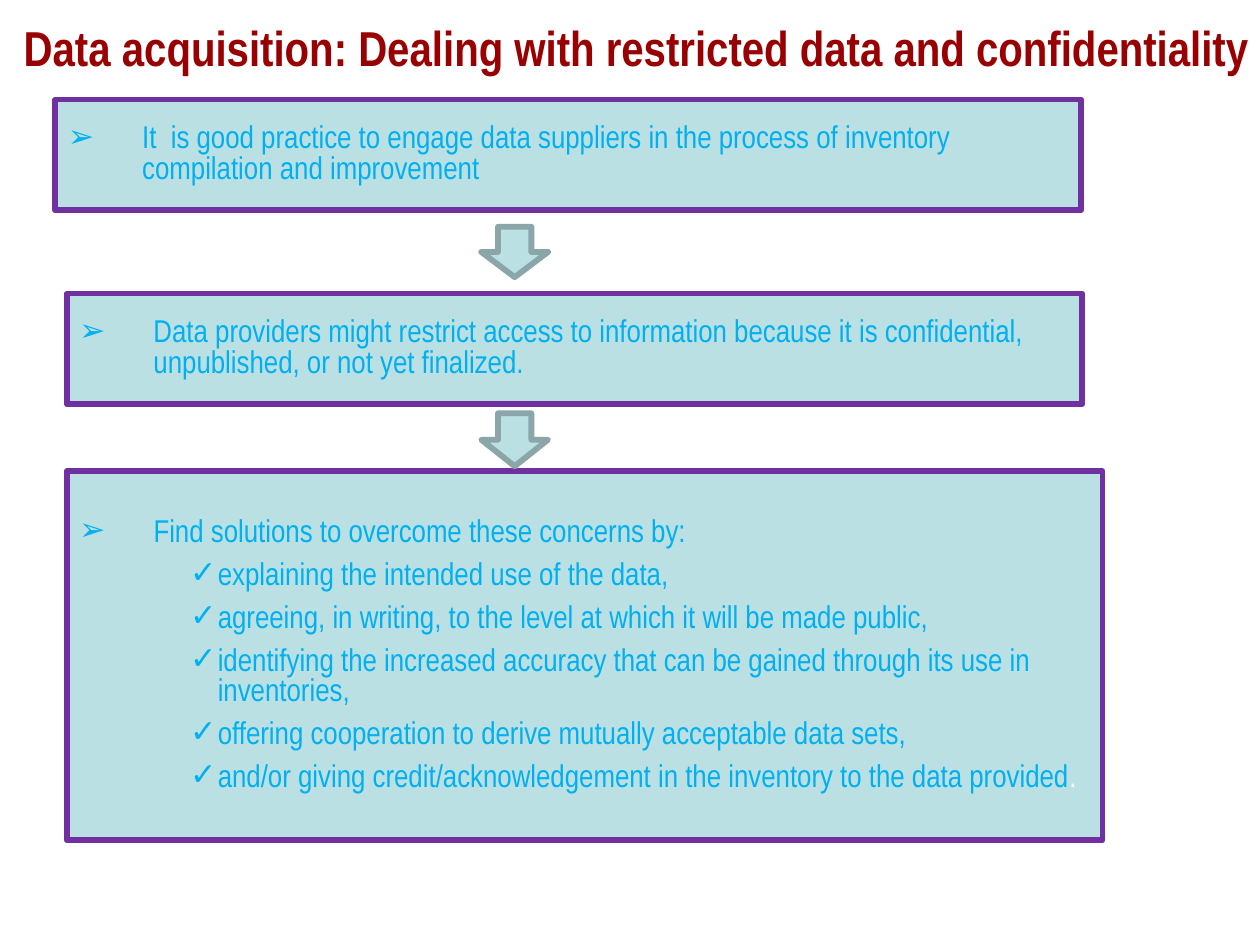
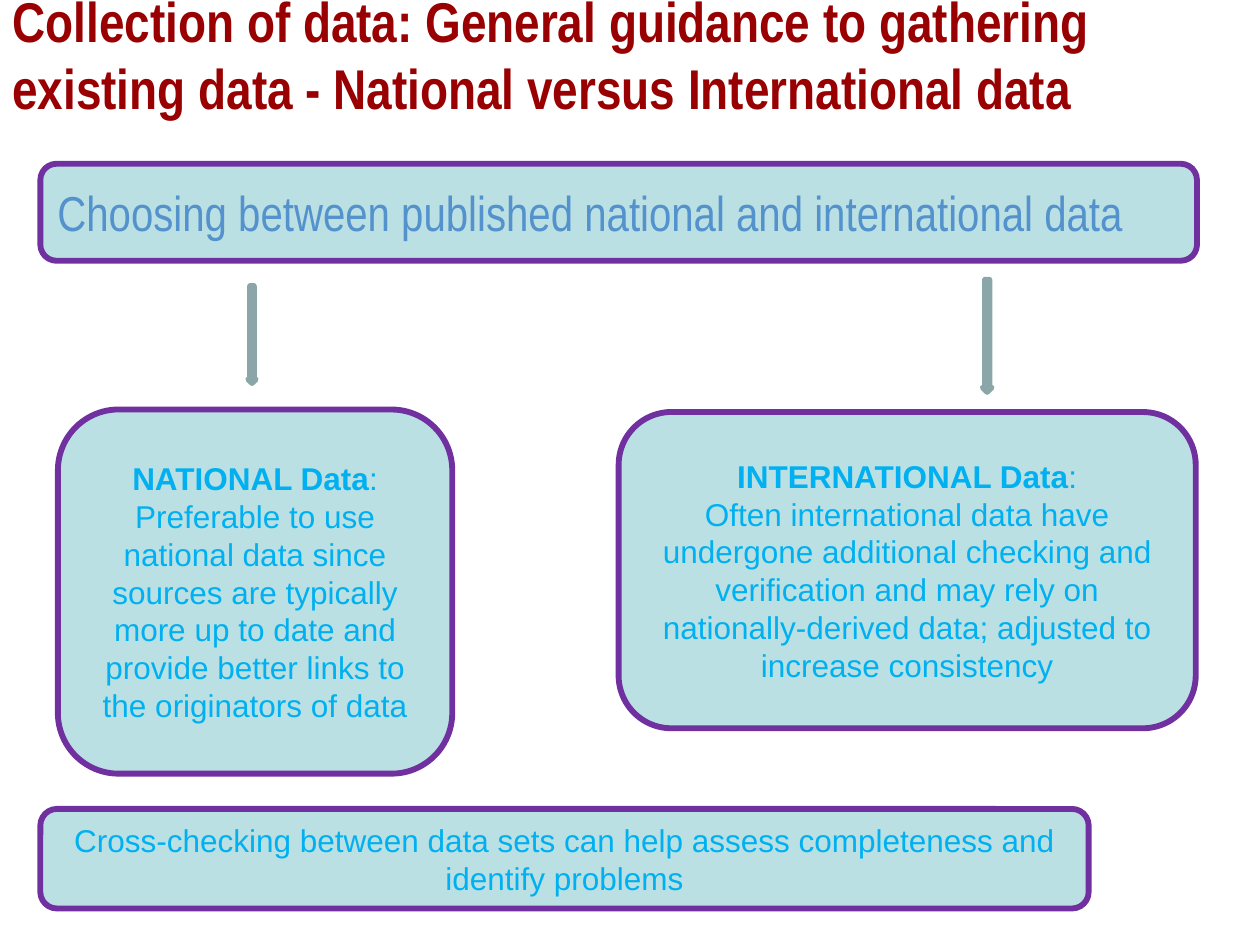
import pptx
import pptx.util
import pptx.dml.color
import pptx.enum.shapes
import pptx.enum.text
from lxml import etree
from pptx.oxml.ns import qn

Inches = pptx.util.Inches
Pt = pptx.util.Pt
MSO = pptx.enum.shapes.MSO_SHAPE
ALIGN = pptx.enum.text.PP_ALIGN
COLORS = {"title": "990002", "fill": "BBE0E3", "border": "7030A0",
          "arrow": "8AA6A8", "body": "00B0F0", "heading": "5492CD",
          "white": "FFFFFF"}
NARROW = "Arial Narrow"


def rgb(name):
    return pptx.dml.color.RGBColor.from_string(COLORS[name])


def add_text(s, box, paras, kind=None, line="border", size=18, font="Arial",
             color="body", bold=False, align=ALIGN.LEFT, spacing=None,
             before=0, bullets=()):
    at = [Inches(v) for v in box]
    if kind is None:
        sp = s.shapes.add_textbox(*at)
    else:
        sp = s.shapes.add_shape(kind, *at)
        sp.shadow.inherit = False
        sp.fill.solid()
        sp.fill.fore_color.rgb = rgb("fill")
        sp.line.color.rgb = rgb(line)
        sp.line.width = Pt(3.35)
    tf = sp.text_frame
    tf.word_wrap = True
    tf.vertical_anchor = pptx.enum.text.MSO_ANCHOR.MIDDLE
    for i, runs in enumerate(paras):
        p = tf.paragraphs[0] if i == 0 else tf.add_paragraph()
        p.alignment = align
        if spacing:
            p.line_spacing = spacing
        if i and before:
            p.space_before = Pt(before)
        if bullets:
            char, margin, hang = bullets[min(i, len(bullets) - 1)]
            pPr = p._p.get_or_add_pPr()
            pPr.set("marL", str(Inches(margin)))
            pPr.set("indent", str(-Inches(hang)))
            etree.SubElement(pPr, qn("a:buFont")).set("typeface", "Arial")
            etree.SubElement(pPr, qn("a:buChar")).set("char", char)
        if isinstance(runs, str):
            runs = [(runs, {})]
        for text, change in runs:
            r = p.add_run()
            r.text = text
            r.font.size = Pt(size)
            r.font.name = font
            r.font.bold = change.get("bold", bold)
            r.font.color.rgb = rgb(change.get("color", color))


prs = pptx.Presentation()
prs.slide_width = Inches(10)
prs.slide_height = Inches(7.5)
blank = prs.slide_layouts[6]
title = dict(font=NARROW, color="title", bold=True)
step = dict(kind=MSO.RECTANGLE, font=NARROW, spacing=0.8, before=7.2,
            bullets=[("➢", 0.59, 0.59), ("✓", 1.1, 0.22)])
centred = dict(kind=MSO.ROUNDED_RECTANGLE, align=ALIGN.CENTER)
arrow = dict(kind=MSO.DOWN_ARROW, line="arrow")

s = prs.slides.add_slide(blank)
add_text(s, (0.09, 0, 10, 0.75),
         ["Data acquisition: Dealing with restricted data and confidentiality"],
         size=28, **title)
steps = [
    ((0.44, 0.79, 8.14, 0.88),
     ["It  is good practice to engage data suppliers in the process of "
      "inventory compilation and improvement"]),
    ((0.53, 2.33, 8.06, 0.88),
     ["Data providers might restrict access to information because it is "
      "confidential, unpublished, or not yet finalized."]),
    ((0.53, 3.74, 8.22, 2.93),
     ["Find solutions to overcome these concerns by:",
      "explaining the intended use of the data,",
      "agreeing, in writing, to the level at which it will be made public,",
      "identifying the increased accuracy that can be gained through its use "
      "in inventories,",
      "offering cooperation to derive mutually acceptable data sets,",
      [("and/or giving credit/acknowledgement in the inventory to the data "
        "provided", {}), (".", {"color": "white"})]]),
]
for box, paras in steps:
    add_text(s, box, paras, **step)
for top, height in [(1.8, 0.4), (3.28, 0.42)]:
    add_text(s, (3.82, top, 0.53, height), [], **arrow)

s = prs.slides.add_slide(blank)
add_text(s, (0, -0.1, 10, 1.05),
         ["Collection of data: General guidance to gathering existing data - "
          "National versus International data"], size=32, **title)
add_text(s, (0.32, 1.3, 9.18, 0.77),
         ["Choosing between published national and international data"],
         kind=MSO.ROUNDED_RECTANGLE, size=28, font=NARROW, color="heading")
sources = [
    ((0.46, 3.25, 3.13, 2.89), (1.97, 2.27, 0.06, 0.77), "NATIONAL Data",
     "Preferable to use national data since sources are typically more up to "
     "date and provide better links to the originators of data"),
    ((4.91, 3.27, 4.58, 2.51), (7.8, 2.22, 0.07, 0.89), "INTERNATIONAL Data",
     "Often international data have undergone additional checking and "
     "verification and may rely on nationally-derived data; adjusted to "
     "increase consistency"),
]
for box, arrow_box, name, advice in sources:
    add_text(s, box, [[(name, {"bold": True}), (":", {})], advice], **centred)
    add_text(s, arrow_box, [], **arrow)
add_text(s, (0.32, 6.42, 8.32, 0.79),
         ["Cross-checking between data sets can help assess completeness and "
          "identify problems"], **centred)

prs.save("out.pptx")
